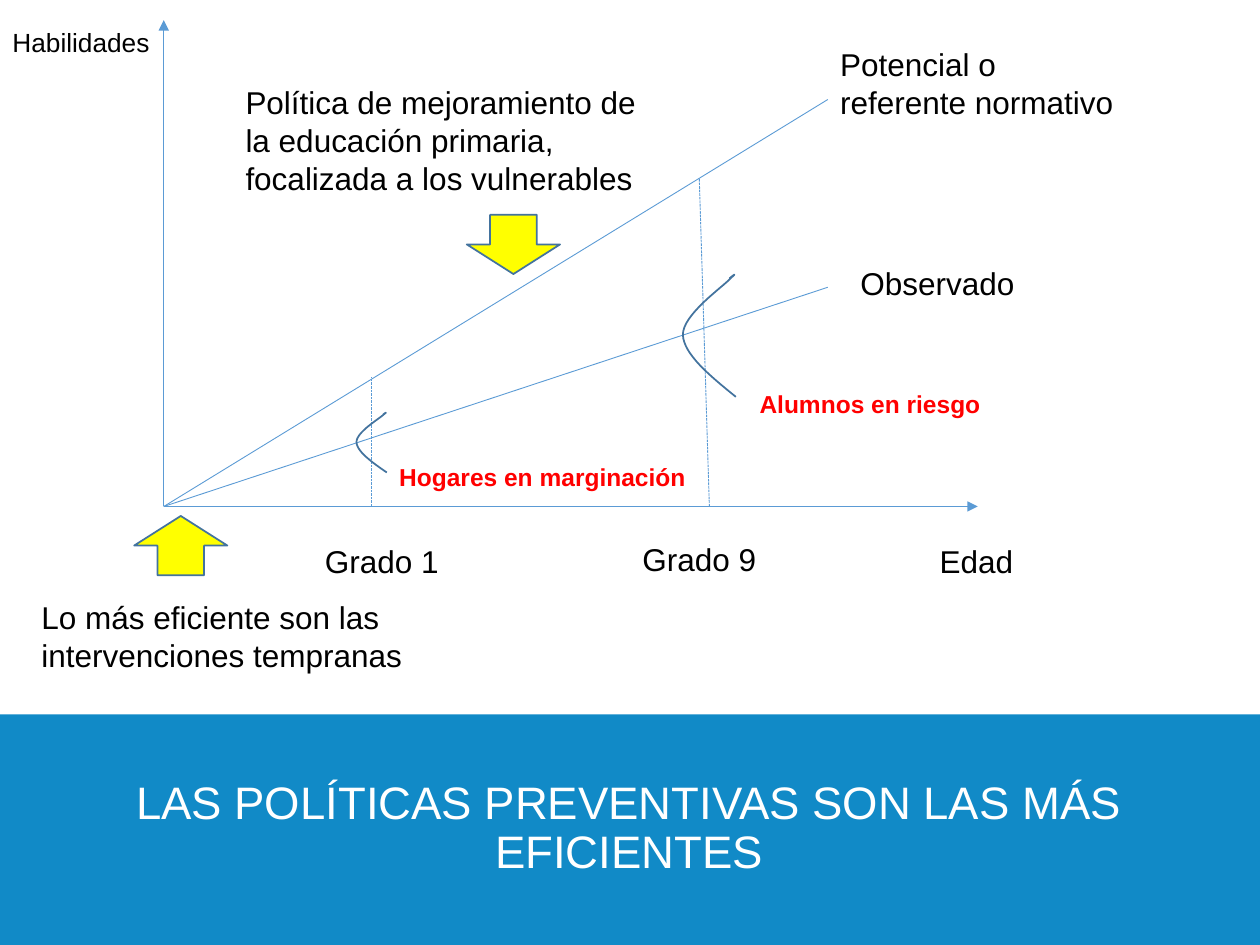
from lxml import etree
from pptx import Presentation
from pptx.dml.color import RGBColor
from pptx.enum.dml import MSO_LINE
from pptx.enum.shapes import MSO_CONNECTOR, MSO_SHAPE
from pptx.enum.text import PP_ALIGN
from pptx.oxml.ns import qn
from pptx.util import Inches, Pt

RECT, ARROW = MSO_SHAPE.RECTANGLE, MSO_SHAPE.RIGHT_ARROW
STRAIGHT, DOTTED = MSO_CONNECTOR.STRAIGHT, MSO_LINE.SQUARE_DOT
CENTER, LEFT = PP_ALIGN.CENTER, PP_ALIGN.LEFT

BLUE = RGBColor(0x11, 0x8A, 0xC7)
LINE_BLUE = RGBColor(0x5B, 0x9B, 0xD5)
EDGE_BLUE = RGBColor(0x43, 0x73, 0x9E)
YELLOW = RGBColor(0xFF, 0xFF, 0x00)
RED = RGBColor(0xFF, 0x00, 0x00)
BLACK = RGBColor(0x00, 0x00, 0x00)
WHITE = RGBColor(0xFF, 0xFF, 0xFF)

prs = Presentation()
prs.slide_width, prs.slide_height = Inches(10), Inches(7.5)
s = prs.slides.add_slide(prs.slide_layouts[6])

# Grid: 100 columns by 75 rows of square cells
CELL = prs.slide_width // 100


def grid(*cells):
    return [round(c * CELL) for c in cells]


def add_text(box, text, size=18, color=BLACK, bold=False, align=LEFT):
    tf = s.shapes.add_textbox(*grid(*box)).text_frame
    tf.word_wrap = True
    tf.text = text
    p = tf.paragraphs[0]
    p.alignment = align
    font = p.runs[0].font
    font.name, font.size, font.bold = "Arial", Pt(size), bold
    font.color.rgb = color
    return p


# Title band
band = s.shapes.add_shape(RECT, *grid(0, 56.7, 100, 18.4))
band.shadow.inherit = False
band.fill.solid()
band.fill.fore_color.rgb = BLUE
band.line.fill.background()
title = add_text((3.7, 61.4, 92.5, 8.9), "LAS POLÍTICAS PREVENTIVAS SON LAS MÁS EFICIENTES",
                 26, WHITE, align=CENTER)
title.line_spacing = 0.9

# Axes, growth lines and grade markers: start, end, dash, arrowhead
origin = (13, 40.2)
lines = [
    (origin, (13, 1.6), None, True),
    (origin, (77.6, 40.2), None, True),
    (origin, (65.7, 7.9), None, False),
    (origin, (65.7, 22.8), None, False),
    ((29.5, 40.2), (29.5, 29.9), DOTTED, False),
    ((56.3, 40.2), (55.5, 14.2), DOTTED, False),
]
for start, end, dash, head in lines:
    c = s.shapes.add_connector(STRAIGHT, *grid(*start, *end))
    c.line.color.rgb = LINE_BLUE
    c.line.width = Pt(0.5)
    if dash:
        c.line.dash_style = dash
    spPr = c.element.spPr
    if head:
        etree.SubElement(spPr.find(qn("a:ln")), qn("a:tailEnd"), type="triangle")
    etree.SubElement(spPr, qn("a:effectLst"))

# Distribution curves: Bezier knots in a unit box, scaled to each place
knots = [(1, 1), (0.5, 0.82), (0.02, 0.64), (0, 0.48), (-0.02, 0.31),
         (0.76, 0.07), (0.9, 0), (1.07, -0.07), (0.88, 0), (0.88, 0)]
STEPS = 16
curve = [knots[0]]
for k in range(0, 9, 3):
    a, b, c, d = knots[k:k + 4]
    for i in range(1, STEPS + 1):
        t = i / STEPS
        u = 1 - t
        curve.append([u**3 * a[n] + 3 * u * u * t * b[n] + 3 * u * t * t * c[n] + t**3 * d[n]
                      for n in (0, 1)])
for left, top, width, height in [(54.2, 22.1, 4.2, 9.4), (28.3, 32.9, 2.4, 4.6)]:
    points = [grid(left + x * width, top + y * height) for x, y in curve]
    builder = s.shapes.build_freeform(*points[0])
    builder.add_line_segments(points[1:], close=False)
    sp = builder.convert_to_shape()
    sp.shadow.inherit = False
    sp.fill.background()
    sp.line.color.rgb = EDGE_BLUE
    sp.line.width = Pt(1)

# Yellow policy arrows: one up, one down
for left, top, angle in [(12, 39.6, 270), (38.4, 15.7, 90)]:
    sp = s.shapes.add_shape(ARROW, *grid(left, top, 4.7, 7.4))
    sp.rotation = angle
    sp.shadow.inherit = False
    sp.fill.solid()
    sp.fill.fore_color.rgb = YELLOW
    sp.line.color.rgb = EDGE_BLUE
    sp.line.width = Pt(1)

# Axis, line and policy labels
add_text((0, 1.6, 13.8, 3.5), "Habilidades", 15)
labels = [
    ((73.6, 42.5, 18.9, 4), "Edad"),
    ((24.8, 42.5, 11.8, 4), "Grado 1"),
    ((50, 42.4, 13.4, 4), "Grado 9"),
    ((65.7, 3.1, 24.4, 7.1), "Potencial o referente normativo"),
    ((67.3, 20.5, 18.1, 4), "Observado"),
    ((2.3, 47, 35.1, 7.1), "Lo más eficiente son las intervenciones tempranas"),
    ((18.5, 6.1, 35.1, 10.1),
     "Política de mejoramiento de la educación primaria, focalizada a los vulnerables"),
]
for box, text in labels:
    add_text(box, text)

# Risk group labels
for left, top, text in [(30.7, 36.2, "Hogares en marginación"), (59.3, 30.4, "Alumnos en riesgo")]:
    add_text((left, top, 27.7, 3.4), text, 14, RED, bold=True)

prs.save("out.pptx")
